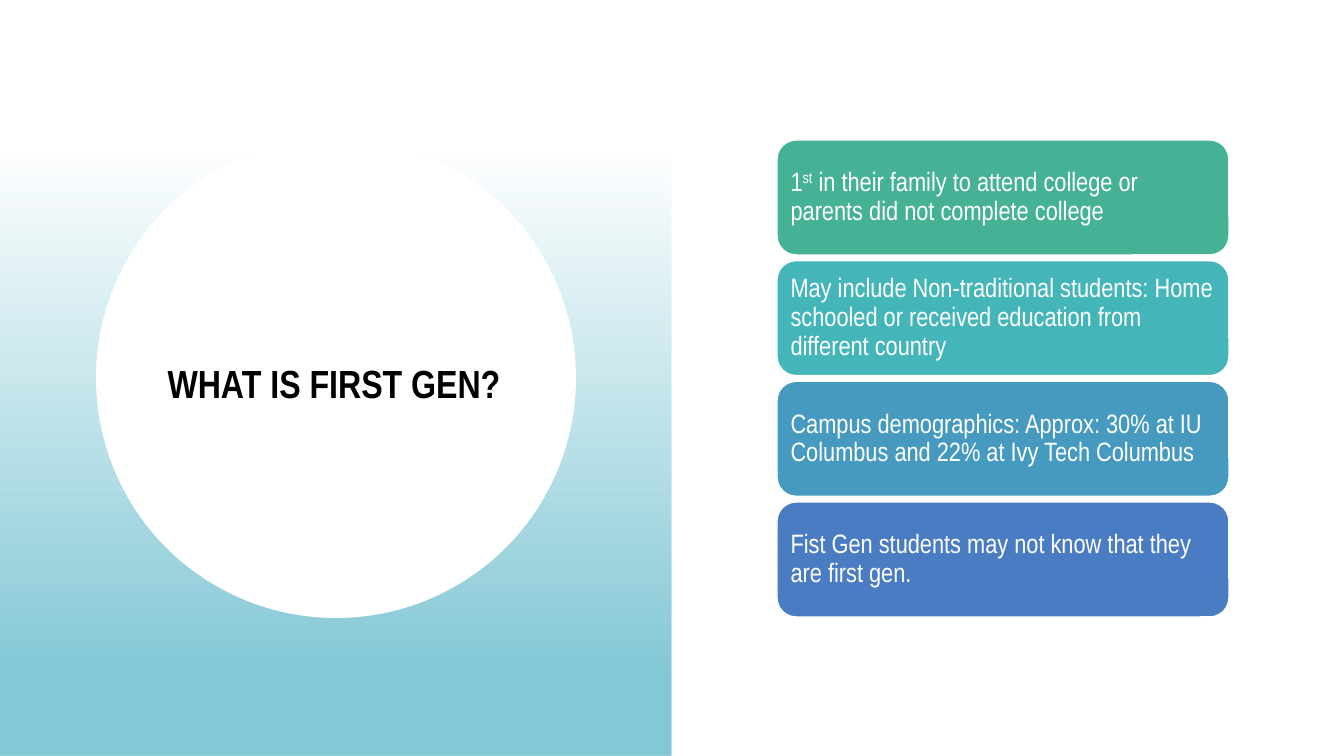
from lxml import etree
from pptx import Presentation
from pptx.dml.color import RGBColor
from pptx.enum.shapes import MSO_SHAPE
from pptx.enum.text import MSO_ANCHOR, PP_ALIGN
from pptx.oxml.ns import qn
from pptx.util import Pt

OVAL, RECT, ROUND = MSO_SHAPE.OVAL, MSO_SHAPE.RECTANGLE, MSO_SHAPE.ROUNDED_RECTANGLE
MIDDLE = MSO_ANCHOR.MIDDLE
LEFT, CENTER = PP_ALIGN.LEFT, PP_ALIGN.CENTER

WHITE = RGBColor(0xFF, 0xFF, 0xFF)
BLACK = RGBColor(0x00, 0x00, 0x00)
TEAL = RGBColor(0x82, 0xC8, 0xD6)
GREEN = RGBColor(0x45, 0xB1, 0x95)
AQUA = RGBColor(0x44, 0xB5, 0xB9)
SKY = RGBColor(0x46, 0x99, 0xBF)
BLUE = RGBColor(0x4A, 0x7C, 0xC3)

FONT = "Arial Narrow"
TITLE = "WHAT IS FIRST GEN?"
# Each card: fill, then runs of (text, raised)
CARDS = [
    (GREEN, [("1", False), ("st", True),
             (" in their family to attend college or parents did not complete college", False)]),
    (AQUA, [("May include Non-traditional students: Home schooled or received "
             "education from different country", False)]),
    (SKY, [("Campus demographics: Approx: 30% at IU Columbus and 22% at Ivy Tech Columbus",
            False)]),
    (BLUE, [("Fist Gen students may not know that they are first gen.", False)]),
]

SCALE = 9071.43  # EMU in one px
WIDE, HIGH = 1344, 756
CARD_X, CARD_Y, CARD_W, CARD_H = 777, 140, 452, 115
CARD_END = 617


def px(num):
    return round(num * SCALE)


def write(shape, runs, size, color, align=LEFT, bold=False, space=0.9, pad=(8, 8)):
    """Fill a shape with one paragraph; pad is (side, top) in px."""
    frame = shape.text_frame
    frame.word_wrap = True
    frame.vertical_anchor = MIDDLE
    frame.margin_left = frame.margin_right = px(pad[0])
    frame.margin_top = frame.margin_bottom = px(pad[1])
    para = frame.paragraphs[0]
    para.alignment = align
    para.line_spacing = space
    for text, raised in runs:
        run = para.add_run()
        run.text = text
        font = run.font
        font.name, font.size, font.bold = FONT, Pt(size), bold
        font.color.rgb = color
        if raised:
            run._r.get_or_add_rPr().set("baseline", "30000")


def add_block(slide, kind, x, y, w, h, fill=None, line=None):
    shape = slide.shapes.add_shape(kind, px(x), px(y), px(w), px(h))
    shape.shadow.inherit = False
    if fill is not None:
        shape.fill.solid()
        shape.fill.fore_color.rgb = fill
    if line is None:
        shape.line.fill.background()
    else:
        shape.line.color.rgb = line
        shape.line.width = Pt(1)
    return shape


def fade(shape, color, start, end):
    """Fade downward from clear to solid colour."""
    shape.fill.gradient()
    shape.fill.gradient_angle = 270
    for stop, place in zip(shape.fill.gradient_stops, (start, end)):
        stop.color.rgb = color
        stop.position = place
    first = next(shape._element.spPr.iter(qn("a:srgbClr")))
    etree.SubElement(first, qn("a:alpha")).set("val", "0")


def main():
    deck = Presentation()
    deck.slide_width, deck.slide_height = px(WIDE), px(HIGH)
    slide = deck.slides.add_slide(deck.slide_layouts[5])

    panel = add_block(slide, RECT, 0, 0, WIDE // 2, HIGH)
    fade(panel, TEAL, 0.2, 0.9)
    add_block(slide, OVAL, 96, 138, 480, 480, WHITE)

    title = slide.shapes.title
    title.left, title.top, title.width, title.height = map(px, (133, 252, 402, 252))
    write(title, [(TITLE, False)], 28, BLACK, CENTER, bold=True, space=1.2, pad=(10, 5))
    slide.shapes._spTree.append(title._element)  # bring in front of the circle

    step = (CARD_END - CARD_H - CARD_Y) / (len(CARDS) - 1)
    for i, (fill, runs) in enumerate(CARDS):
        card = add_block(slide, ROUND, CARD_X, CARD_Y + i * step, CARD_W, CARD_H, fill, WHITE)
        write(card, runs, 19, WHITE)

    deck.save("out.pptx")


if __name__ == "__main__":
    main()
